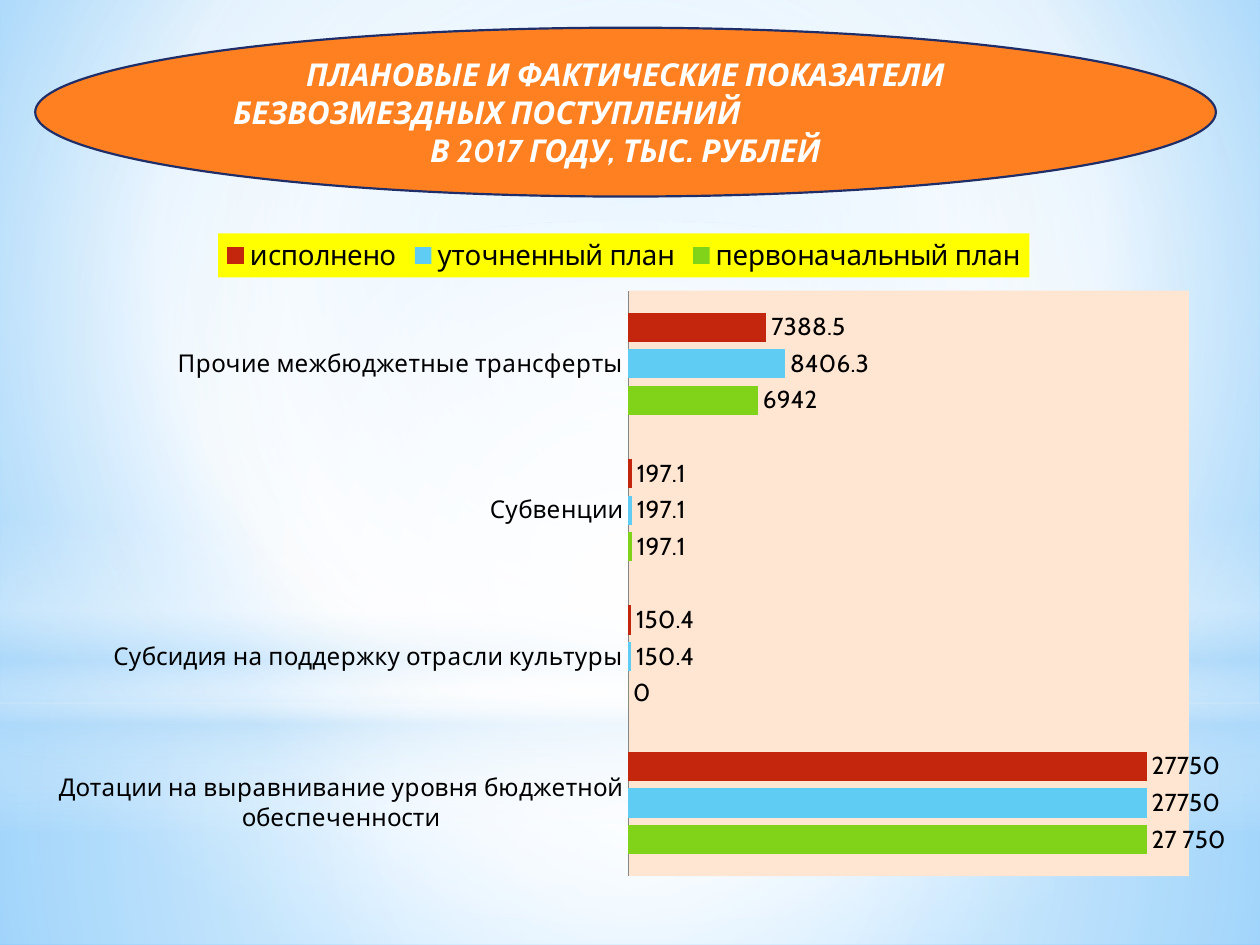
from dataclasses import dataclass

import pptx
import pptx.chart.data
import pptx.dml.color
import pptx.enum.chart
import pptx.enum.shapes
import pptx.enum.text
import pptx.oxml
import pptx.oxml.ns
import pptx.util
from pptx.util import Inches

qn = pptx.oxml.ns.qn
Kind = pptx.enum.shapes.MSO_SHAPE


@dataclass(frozen=True)
class Theme:
    font: str = "Cabin"
    title: int = 18
    key: int = 16
    body: int = 14
    ink: str = "000000"
    light: str = "FFFFFF"
    sky: str = "B4DCFA"
    oval: str = "FF8021"
    edge: str = "1F2E69"
    axis: str = "868686"
    plot: str = "FFE6D3"
    band: str = "FFFF00"
    bars: tuple = ("81D31A", "5ECCF3", "C3260C")


THEME = Theme()

CATS = ["Дотации на выравнивание уровня бюджетной обеспеченности",
        "Субсидия на поддержку отрасли культуры",
        "Субвенции",
        "Прочие межбюджетные трансферты"]
ROWS = [("первоначальный план", (27750, 0, 197.1, 6942)),
        ("уточненный план", (27750, 150.4, 197.1, 8406.3)),
        ("исполнено", (27750, 150.4, 197.1, 7388.5))]
TITLE = ["ПЛАНОВЫЕ И ФАКТИЧЕСКИЕ ПОКАЗАТЕЛИ",
         "БЕЗВОЗМЕЗДНЫХ ПОСТУПЛЕНИЙ",
         "В 2017 ГОДУ, ТЫС. РУБЛЕЙ"]


def rgb(code):
    return pptx.dml.color.RGBColor.from_string(code)


def style(font, size, color=THEME.ink):
    font.name, font.size = THEME.font, pptx.util.Pt(size)
    font.color.rgb = rgb(color)


def shade(fill, root, stops, focus=None):
    """Fill with (position, colour, opacity) stops: round if focus is given, else downward."""
    fill.solid()
    items = "".join(
        f'<a:gs pos="{pos * 1000}"><a:srgbClr val="{code}">'
        f'<a:alpha val="{alpha * 1000}"/></a:srgbClr></a:gs>'
        for pos, code, alpha in stops)
    if focus:
        sides = " ".join(f'{side}="{val * 1000}"' for side, val in zip("ltrb", focus))
        way = f'<a:path path="circle"><a:fillToRect {sides}/></a:path>'
    else:
        way = '<a:lin ang="5400000" scaled="0"/>'
    grad = pptx.oxml.parse_xml(
        f'<a:gradFill {pptx.oxml.ns.nsdecls("a")} rotWithShape="1">'
        f'<a:gsLst>{items}</a:gsLst>{way}</a:gradFill>')
    old = next(root.iter(qn("a:solidFill")))
    old.getparent().replace(old, grad)


def backdrop(slide, width):
    white, sky, mid = THEME.light, THEME.sky, (50, 50, 50, 50)
    shade(slide.background.fill, slide.element,
          [(0, "9ED5FF", 100), (60, white, 100), (100, "5BB9FF", 100)], (20, 10, 20, 60))
    layers = [
        (Kind.RECTANGLE, 5.58, 1.92,
         [(0, white, 91), (37, white, 76), (100, sky, 79)], mid),
        (Kind.RECTANGLE, 0, 5.58,
         [(0, white, 89), (48, white, 62), (100, sky, 79)], mid),
        (Kind.RECTANGLE, 4.12, 2.5,
         [(0, white, 0), (29, white, 30), (45, sky, 40),
          (55, white, 26), (65, sky, 60), (100, white, 0)], None),
        (Kind.OVAL, 1.75, 5.58, [(0, white, 100), (56, white, 0)], mid),
    ]
    for kind, top, high, stops, focus in layers:
        shape = slide.shapes.add_shape(kind, 0, Inches(top), width, Inches(high))
        shape.shadow.inherit = False
        shade(shape.fill, shape.element, stops, focus)
        shape.line.fill.background()


def header(slide, left, top, width, high):
    oval = slide.shapes.add_shape(Kind.OVAL, left, top, width, high)
    oval.shadow.inherit = False
    oval.fill.solid()
    oval.fill.fore_color.rgb = rgb(THEME.oval)
    oval.line.color.rgb = rgb(THEME.edge)
    oval.line.width = pptx.util.Pt(1.25)
    frame = oval.text_frame
    frame.word_wrap = True
    frame.vertical_anchor = pptx.enum.text.MSO_ANCHOR.MIDDLE
    align = pptx.enum.text.PP_ALIGN
    for num, line in enumerate(TITLE):
        para = frame.add_paragraph() if num else frame.paragraphs[0]
        para.text = line
        para.alignment = align.CENTER
        style(para.font, THEME.title, THEME.light)
        para.font.bold = para.font.italic = True
    shifted = frame.paragraphs[1]
    shifted.alignment = align.LEFT
    shifted._p.get_or_add_pPr().set("marL", str(Inches(0.1)))


def place(node, x, y, w, h, inner=False):
    """Fix a chart part at fractions of the chart box."""
    for old in node.findall(qn("c:layout")):
        node.remove(old)
    target = '<c:layoutTarget val="inner"/>' if inner else ""
    modes = '<c:xMode val="edge"/><c:yMode val="edge"/>'
    sizes = "".join(f'<c:{key} val="{val}"/>' for key, val in zip("xywh", (x, y, w, h)))
    layout = pptx.oxml.parse_xml(
        f'<c:layout {pptx.oxml.ns.nsdecls("c")}>{target}{modes}{sizes}</c:layout>')
    if inner:
        node.insert(0, layout)
    else:
        node.find(qn("c:legendPos")).addnext(layout)


def paint(node, color, before):
    """Give a chart part a plain fill, ahead of the first child named in before."""
    props = pptx.oxml.parse_xml(
        f'<c:spPr {pptx.oxml.ns.nsdecls("c", "a")}><a:solidFill>'
        f'<a:srgbClr val="{color}"/></a:solidFill></c:spPr>')
    later = next((kid for kid in node if kid.tag in map(qn, before)), None)
    if later is None:
        node.append(props)
    else:
        later.addprevious(props)


def graph(slide, left, top, width, high):
    enum = pptx.enum.chart
    data = pptx.chart.data.CategoryChartData()
    data.categories = CATS
    for name, vals in ROWS:
        data.add_series(name, vals)
    chart = slide.shapes.add_chart(
        enum.XL_CHART_TYPE.BAR_CLUSTERED, left, top, width, high, data).chart
    style(chart.font, THEME.body)
    chart.has_title = False
    chart.has_legend = True
    legend = chart.legend
    legend.position = enum.XL_LEGEND_POSITION.TOP
    legend.include_in_layout = False
    style(legend.font, THEME.key)
    place(legend._element, 0.03, 0.02, 0.93, 0.06)
    paint(legend._element, THEME.band, ["c:txPr"])

    axis = chart.category_axis
    axis.major_tick_mark = axis.minor_tick_mark = enum.XL_TICK_MARK.NONE
    axis.format.line.color.rgb = rgb(THEME.axis)
    scale = chart.value_axis
    scale.minimum_scale, scale.maximum_scale = 0, 30000
    scale.has_major_gridlines = False
    scale.visible = False

    plot = chart.plots[0]
    plot.gap_width, plot.overlap = 150, -25
    plot.vary_by_categories = False
    area = chart._chartSpace.chart.plotArea
    place(area, 0.5, 0.1, 0.47, 0.88, inner=True)
    paint(area, THEME.plot, ["c:extLst"])

    outside = enum.XL_LABEL_POSITION.OUTSIDE_END
    for series, color in zip(plot.series, THEME.bars):
        series.format.fill.solid()
        series.format.fill.fore_color.rgb = rgb(color)
        labels = series.data_labels
        labels.show_value = True
        labels.position = outside
        style(labels.font, THEME.body)
    label = plot.series[0].points[0].data_label
    label.text_frame.text = "27 750"
    style(label.text_frame.paragraphs[0].font, THEME.body)
    label.position = outside


def main():
    deck = pptx.Presentation()
    deck.slide_width, deck.slide_height = Inches(10), Inches(7.5)
    slide = deck.slides.add_slide(deck.slide_layouts[6])
    backdrop(slide, deck.slide_width)
    graph(slide, Inches(0.28), Inches(1.78), Inches(9.45), Inches(5.28))
    header(slide, Inches(0.28), Inches(0.22), Inches(9.37), Inches(1.34))
    deck.save("out.pptx")


if __name__ == "__main__":
    main()
